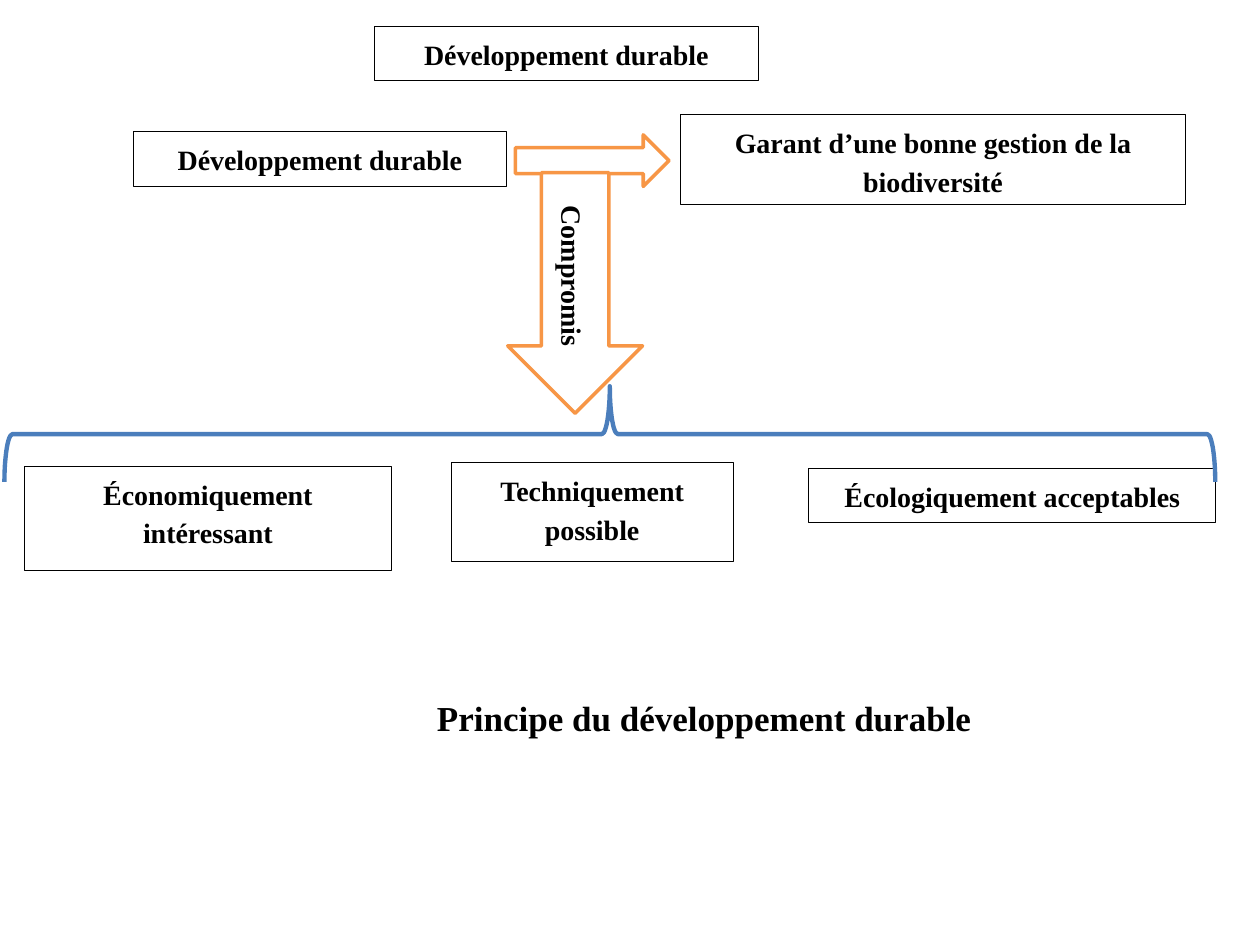
from pptx import Presentation
from pptx.dml.color import RGBColor
from pptx.enum.shapes import MSO_SHAPE
from pptx.enum.text import MSO_ANCHOR, MSO_AUTO_SIZE, PP_ALIGN
from pptx.util import Inches, Pt

RECTANGLE = MSO_SHAPE.RECTANGLE
RIGHT_ARROW = MSO_SHAPE.RIGHT_ARROW
DOWN_ARROW = MSO_SHAPE.DOWN_ARROW
RIGHT_BRACE = MSO_SHAPE.RIGHT_BRACE
TOP, MIDDLE = MSO_ANCHOR.TOP, MSO_ANCHOR.MIDDLE
CENTER = PP_ALIGN.CENTER
TITLE_ONLY = 5


def color(hex_string):
    return RGBColor.from_string(hex_string)


def write(shape, text, size=16, anchor=TOP, spacing=1.15, after=10,
          vertical=False):
    frame = shape.text_frame
    frame.word_wrap = True
    frame.vertical_anchor = anchor
    if vertical:
        frame._txBody.bodyPr.set("vert", "vert")
    paragraph = frame.paragraphs[0]
    paragraph.alignment = CENTER
    paragraph.line_spacing = spacing
    paragraph.space_before = Pt(0)
    paragraph.space_after = Pt(after)
    run = paragraph.add_run()
    run.text = text
    run.font.name = Diagram.font
    run.font.size = Pt(size)
    run.font.bold = True
    run.font.color.rgb = color(Diagram.ink)


class Diagram:
    """Style of the diagram and the slide it is drawn on."""
    font = "Times New Roman"
    ink = "000000"
    paper = "FFFFFF"
    arrow_line = "F79646"
    brace_line = "4B7EBC"

    def __init__(self, slide):
        self.slide = slide

    def outline(self, kind, bounds, line_color, line_width, filled=True):
        shape = self.slide.shapes.add_shape(kind, *map(Inches, bounds))
        shape.shadow.inherit = False
        if filled:
            shape.fill.solid()
            shape.fill.fore_color.rgb = color(self.paper)
        else:
            shape.fill.background()
        shape.line.color.rgb = color(line_color)
        shape.line.width = Pt(line_width)
        return shape

    def box(self, text, *bounds):
        write(self.outline(RECTANGLE, bounds, self.ink, 0.5), text)

    def arrow(self, kind, *bounds, label=None):
        arrow = self.outline(kind, bounds, self.arrow_line, 2)
        if label:
            write(arrow, label, anchor=MIDDLE, vertical=True)

    def brace(self, *bounds):
        """Brace turned so that its tip points up."""
        brace = self.outline(RIGHT_BRACE, bounds, self.brace_line, 2.5,
                             filled=False)
        brace.rotation = 270

    def title(self, text, *bounds):
        title = self.slide.shapes.title
        title.left, title.top, title.width, title.height = map(Inches, bounds)
        write(title, text, size=20, spacing=1, after=0)
        title.text_frame.auto_size = MSO_AUTO_SIZE.SHAPE_TO_FIT_TEXT


def main():
    deck = Presentation()
    deck.slide_width, deck.slide_height = Inches(10), Inches(7.5)
    diagram = Diagram(deck.slides.add_slide(deck.slide_layouts[TITLE_ONLY]))

    diagram.box("Développement durable", 1.06, 1.04, 2.96, 0.44)
    diagram.box("Garant d’une bonne gestion de la biodiversité",
                5.4, 0.91, 4.01, 0.71)
    diagram.arrow(RIGHT_ARROW, 4.09, 1.07, 1.22, 0.41)
    diagram.arrow(DOWN_ARROW, 4.03, 1.37, 1.07, 1.91, label="Compromis")
    diagram.box("Développement durable", 2.97, 0.21, 3.05, 0.43)

    diagram.box("Économiquement intéressant", 0.19, 3.7, 2.92, 0.83)
    diagram.box("Techniquement possible", 3.58, 3.67, 2.24, 0.79)
    diagram.box("Écologiquement acceptables", 6.42, 3.72, 3.23, 0.43)
    diagram.brace(4.46, -1.36, 0.76, 9.61)

    diagram.title("Principe du développement durable", 1.77, 5.48, 7.64, 0.44)
    deck.save("out.pptx")


if __name__ == "__main__":
    main()
